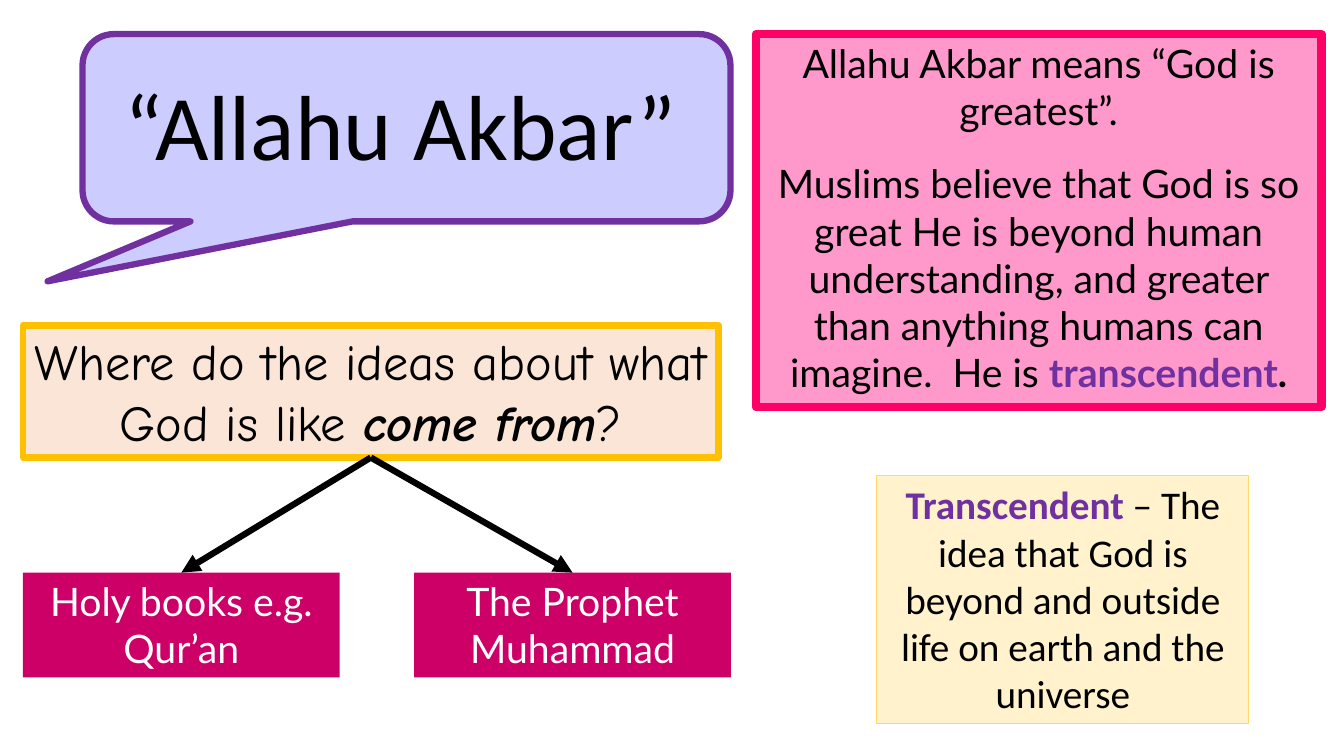
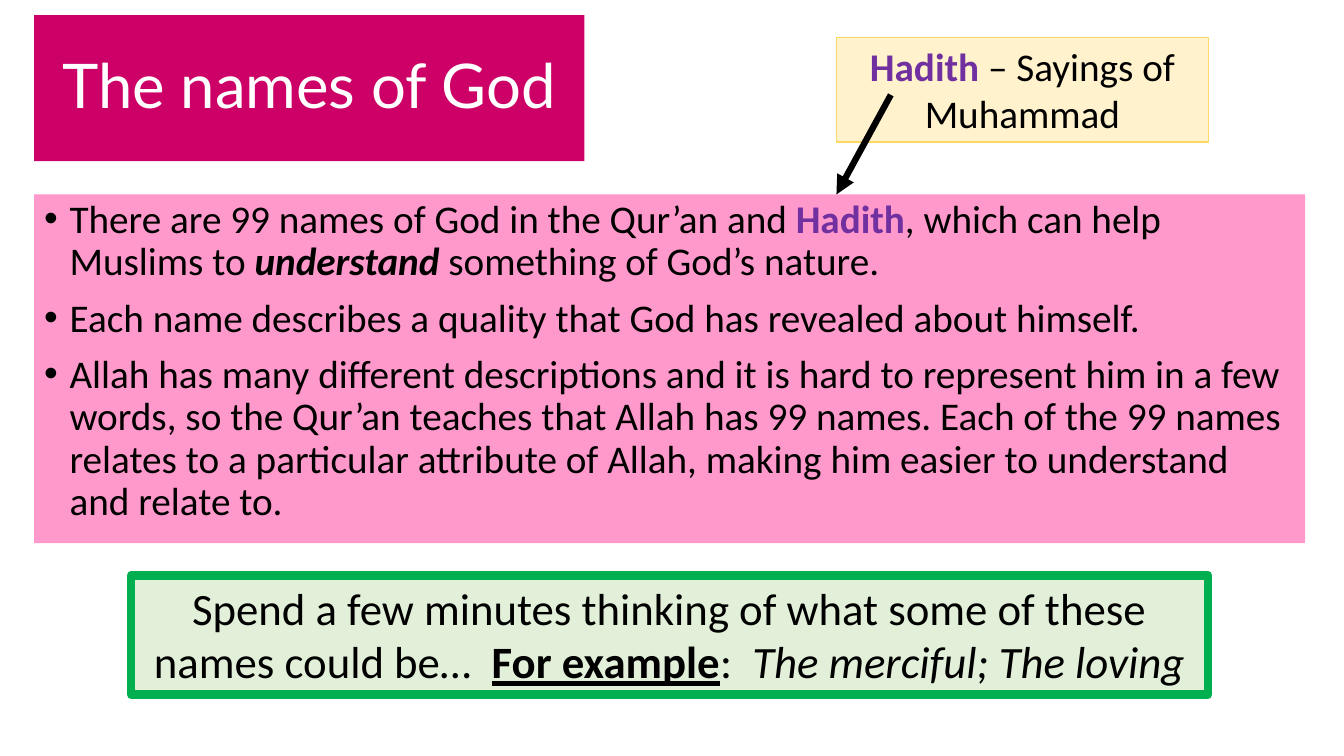
import pptx
import pptx.util
import pptx.dml.color
import pptx.enum.shapes
import pptx.enum.text
import pptx.oxml.ns
import lxml.etree

Cm, Pt = pptx.util.Cm, pptx.util.Pt
RGB = pptx.dml.color.RGBColor
KIND = pptx.enum.shapes.MSO_SHAPE
ALIGN = pptx.enum.text.PP_ALIGN
ANCHOR = pptx.enum.text.MSO_ANCHOR
qn = pptx.oxml.ns.qn

# Shared colours
BLACK = RGB(0x00, 0x00, 0x00)
WHITE = RGB(0xFF, 0xFF, 0xFF)
MAROON = RGB(0xCC, 0x00, 0x66)
PINK = RGB(0xFF, 0x99, 0xCC)
ROSE = RGB(0xFF, 0x00, 0x66)
PURPLE = RGB(0x70, 0x30, 0xA0)
LILAC = RGB(0xCC, 0xCC, 0xFF)
CREAM = RGB(0xFF, 0xF2, 0xCC)
GOLD = RGB(0xFF, 0xD9, 0x66)
PEACH = RGB(0xFB, 0xE5, 0xD6)
AMBER = RGB(0xFF, 0xC0, 0x00)
MINT = RGB(0xE2, 0xF0, 0xD9)
GREEN = RGB(0x00, 0xB0, 0x50)

# Box styles: fill, line colour, line width, font, size, text colour
STYLES = {
    "source": (MAROON, None, 0, "Lato", 28, WHITE),
    "speech": (LILAC, PURPLE, 4.5, "Calibri", 66, BLACK),
    "meaning": (PINK, ROSE, 6, "Lato", 28, BLACK),
    "term": (CREAM, GOLD, 0.75, "Calibri", 28, BLACK),
    "question": (PEACH, AMBER, 4.5, "Comic Neue", 36, BLACK),
    "task": (MINT, GREEN, 6, "Calibri", 32, BLACK),
}

# Content: a paragraph is a list of (text, marks);
# marks are b bold, i italic, u underline, k key word
SPEECH = "“Allahu Akbar”"
MEANING = [
    [("Allahu Akbar means “God is greatest”.", "")],
    [("Muslims believe that God is so great He is beyond human understanding, "
      "and greater than anything humans can imagine.  He is ", ""),
     ("transcendent", "k"), (".", "b")],
]
BEYOND = [[("Transcendent ", "k"),
           ("– The idea that God is beyond and outside life on earth "
            "and the universe", "")]]
QUESTION = [[("Where do the ideas about what God is like ", ""),
             ("come from", "bi"), ("?", "")]]
SOURCES = ["Holy books e.g. Qur’an", "The Prophet Muhammad"]

NAMES = "The names of God"
POINTS = [
    [("There are 99 names of God in the Qur’an and ", ""), ("Hadith", "k"),
     (", which can help Muslims to ", ""), ("understand", "bi"),
     (" something of God’s nature.", "")],
    [("Each name describes a quality that God has revealed about himself.", "")],
    [("Allah has many different descriptions and it is hard to represent him "
      "in a few words, so the Qur’an teaches that Allah has 99 names. Each of "
      "the 99 names relates to a particular attribute of Allah, making him "
      "easier to understand and relate to.", "")],
]
SAYINGS = [[("Hadith ", "k"), ("– Sayings of Muhammad", "")]]
TASK = [[("Spend a few minutes thinking of what some of these names could be…  ", ""),
         ("For example", "bu"), (":  ", ""), ("The merciful; The loving", "i")]]


def write(frame, paras, face, size, color, align=ALIGN.CENTER, gap=0,
          pitch=None, bullet=False):
    frame.word_wrap = True
    frame.auto_size = pptx.enum.text.MSO_AUTO_SIZE.NONE
    for n, parts in enumerate(paras):
        para = frame.paragraphs[0] if n == 0 else frame.add_paragraph()
        para.alignment = align
        para.space_before = Pt(gap if n else 0)
        if pitch:
            para.line_spacing = pitch
        if bullet:
            props = para._p.get_or_add_pPr()
            props.set("marL", str(Cm(0.64)))
            props.set("indent", str(-Cm(0.64)))
            lxml.etree.SubElement(props, qn("a:buChar")).set("char", "•")
        for text, marks in parts:
            run = para.add_run()
            run.text = text
            font = run.font
            font.name, font.size = face, Pt(size)
            font.color.rgb = PURPLE if "k" in marks else color
            font.bold = "b" in marks or "k" in marks
            font.italic = "i" in marks
            font.underline = "u" in marks


def place(shape, left, top, width, height):
    shape.left, shape.top = Cm(left), Cm(top)
    shape.width, shape.height = Cm(width), Cm(height)


def paint(shape, color):
    shape.fill.solid()
    shape.fill.fore_color.rgb = color


def add_box(slide, style, area, paras, kind=KIND.RECTANGLE):
    fill, edge, width, face, size, color = STYLES[style]
    box = slide.shapes.add_shape(kind, *map(Cm, area))
    box.shadow.inherit = False
    paint(box, fill)
    if edge:
        box.line.color.rgb = edge
        box.line.width = Pt(width)
    else:
        box.line.fill.background()
    box.text_frame.vertical_anchor = ANCHOR.TOP
    write(box.text_frame, paras, face, size, color)
    return box


def add_title(slide, text, area, face, size, color):
    title = slide.shapes.title
    place(title, *area)
    title.text_frame.vertical_anchor = ANCHOR.MIDDLE
    write(title.text_frame, [[(text, "")]], face, size, color, pitch=0.9)
    return title


def add_arrow(slide, x1=0, y1=0, x2=0, y2=0):
    arrow = slide.shapes.add_connector(
        pptx.enum.shapes.MSO_CONNECTOR.STRAIGHT, Cm(x1), Cm(y1), Cm(x2), Cm(y2))
    arrow.line.color.rgb = BLACK
    arrow.line.width = Pt(4.5)
    line = arrow.line._get_or_add_ln()
    lxml.etree.SubElement(line, qn("a:tailEnd")).set("type", "triangle")
    lxml.etree.SubElement(arrow._element.spPr, qn("a:effectLst"))
    return arrow


def build_phrase(deck):
    slide = deck.slides.add_slide(deck.slide_layouts[5])
    # Speech bubble, behind the title
    bubble = add_box(slide, "speech", (2.08, 0.86, 16.33, 4.72), [],
                     KIND.ROUNDED_RECTANGULAR_CALLOUT)
    for n, value in enumerate((-0.554, 0.82, 0.167)):
        bubble.adjustments[n] = value
    title = add_title(slide, SPEECH, (2.08, 1.27, 16.03, 4.04),
                      *STYLES["speech"][3:])
    bubble._element.addnext(title._element)
    # Meaning and key term
    meaning = add_box(slide, "meaning", (19.05, 0.86, 14.25, 9.4), MEANING)
    meaning.text_frame.paragraphs[1].space_before = Pt(19)
    add_box(slide, "term", (22.1, 11.99, 9.37, 6.25), BEYOND)
    # Question leading to its two answers
    ask = add_box(slide, "question", (0.58, 8.2, 17.53, 3.33), QUESTION)
    ask.text_frame.margin_left = ask.text_frame.margin_right = Cm(0.1)
    for n, text in enumerate(SOURCES):
        box = add_box(slide, "source", (0.58 + n * 9.86, 14.43, 7.98, 2.64),
                      [[(text, "")]])
        arrow = add_arrow(slide)
        arrow.begin_connect(ask, 2)
        arrow.end_connect(box, 0)


def build_names(deck):
    slide = deck.slides.add_slide(deck.slide_layouts[1])
    # Title and list
    title = add_title(slide, NAMES, (0.86, 0.38, 13.87, 3.68), "Lato", 44, WHITE)
    paint(title, MAROON)
    body = slide.placeholders[1]
    place(body, 0.86, 4.9, 32.03, 8.79)
    paint(body, PINK)
    write(body.text_frame, POINTS, "Calibri", 28, BLACK, ALIGN.LEFT,
          gap=10, pitch=0.9, bullet=True)
    # Task, key term and its arrow
    add_box(slide, "task", (3.3, 14.5, 27.15, 3), TASK)
    add_box(slide, "term", (21.08, 0.94, 9.37, 2.64), SAYINGS)
    add_arrow(slide, 22.45, 2.39, 21.08, 4.9)


def main():
    deck = pptx.Presentation()
    deck.slide_width, deck.slide_height = Cm(33.87), Cm(19.05)
    build_phrase(deck)
    build_names(deck)
    deck.save("out.pptx")


if __name__ == "__main__":
    main()
